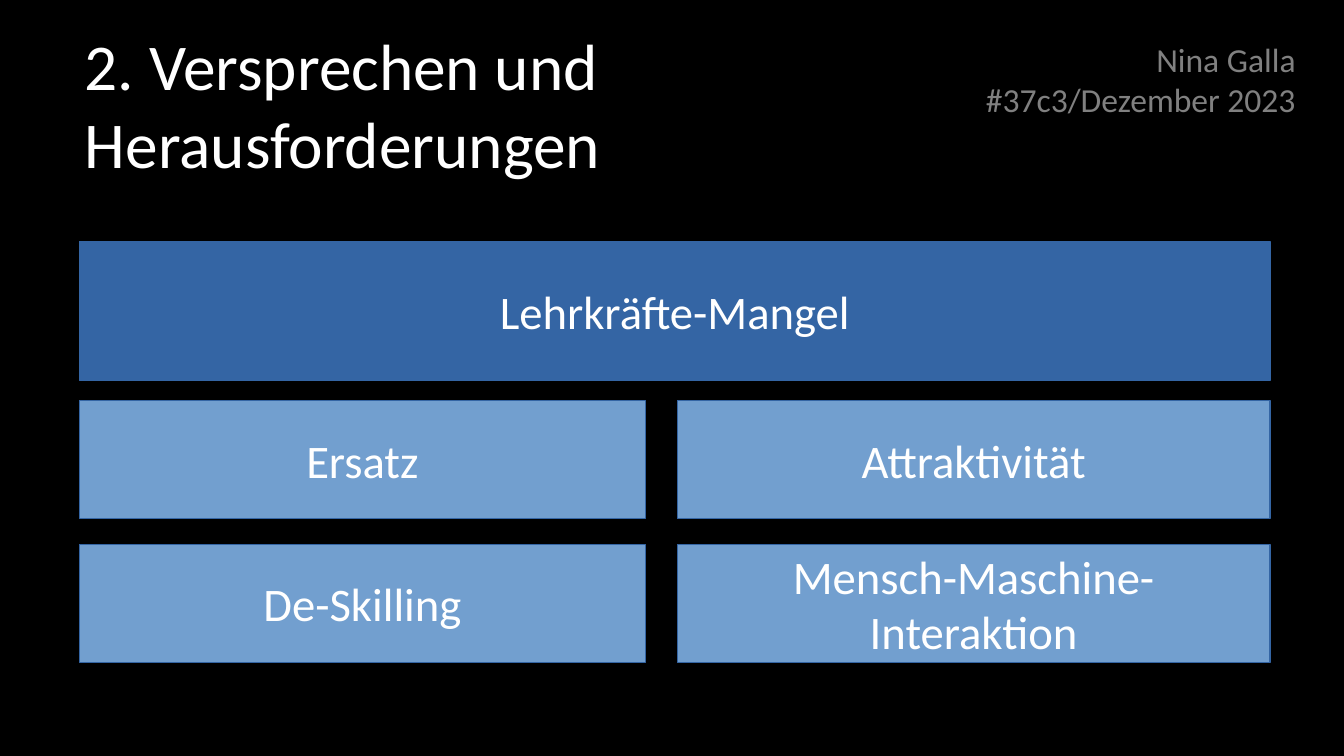
from pptx import Presentation
from pptx import util as u
from pptx.dml.color import RGBColor
from pptx.enum import shapes, text

BLACK = RGBColor(0x00, 0x00, 0x00)
WHITE = RGBColor(0xFF, 0xFF, 0xFF)
GREY = RGBColor(0x80, 0x80, 0x80)
DARK = RGBColor(0x34, 0x65, 0xA4)
LIGHT = RGBColor(0x72, 0x9F, 0xCF)
FONT = "Calibri"
ROWS = [("Ersatz", "Attraktivität"),
        ("De-Skilling", "Mensch-Maschine-Interaktion")]


def place(shape, box):
    shape.left, shape.top, shape.width, shape.height = (u.Cm(v) for v in box)


def write(shape, words, size, color, align, anchor):
    frame = shape.text_frame
    frame.text = words
    frame.word_wrap = True
    frame.auto_size = text.MSO_AUTO_SIZE.NONE
    frame.vertical_anchor = anchor
    for par in frame.paragraphs:
        par.alignment = align
        for run in par.runs:
            run.font.name = FONT
            run.font.size = u.Pt(size)
            run.font.color.rgb = color


def add_title(slide, box):
    title = slide.shapes.title
    place(title, box)
    write(title, "2. Versprechen und\vHerausforderungen", 35, WHITE,
          text.PP_ALIGN.LEFT, text.MSO_ANCHOR.MIDDLE)


def add_byline(slide, box):
    note = slide.shapes.add_textbox(*(u.Cm(v) for v in box))
    write(note, "Nina Galla\n#37c3/Dezember 2023", 18, GREY,
          text.PP_ALIGN.RIGHT, text.MSO_ANCHOR.TOP)


def add_tile(slide, box, words, fill):
    tile = slide.shapes.add_shape(shapes.MSO_SHAPE.RECTANGLE,
                                  *(u.Cm(v) for v in box))
    tile.shadow.inherit = False
    tile.fill.solid()
    tile.fill.fore_color.rgb = fill
    tile.line.color.rgb = DARK
    tile.line.width = u.Pt(0)
    write(tile, words, 25, WHITE,
          text.PP_ALIGN.CENTER, text.MSO_ANCHOR.MIDDLE)


def add_board(slide, box):
    left, top, width, height = box
    add_tile(slide, (left, top, width, 2.62), "Lehrkräfte-Mangel", DARK)
    tall, pitch = 2.23, 2.72
    first = top + height - pitch - tall
    cols = [(left, 10.7), (left + width - 11.2, 11.2)]
    for i, row in enumerate(ROWS):
        for (x, wide), words in zip(cols, row):
            add_tile(slide, (x, first + i * pitch, wide, tall), words, LIGHT)


def main():
    deck = Presentation()
    deck.slide_width, deck.slide_height = u.Cm(25.4), u.Cm(14.29)
    slide = deck.slides.add_slide(deck.slide_layouts[5])
    slide.background.fill.solid()
    slide.background.fill.fore_color.rgb = BLACK
    add_title(slide, (1.35, 0.43, 22.28, 3.05))
    add_board(slide, (1.5, 4.57, 22.5, 7.95))
    add_byline(slide, (12.04, 0.61, 12.7, 1.32))
    deck.save("out.pptx")


if __name__ == "__main__":
    main()
